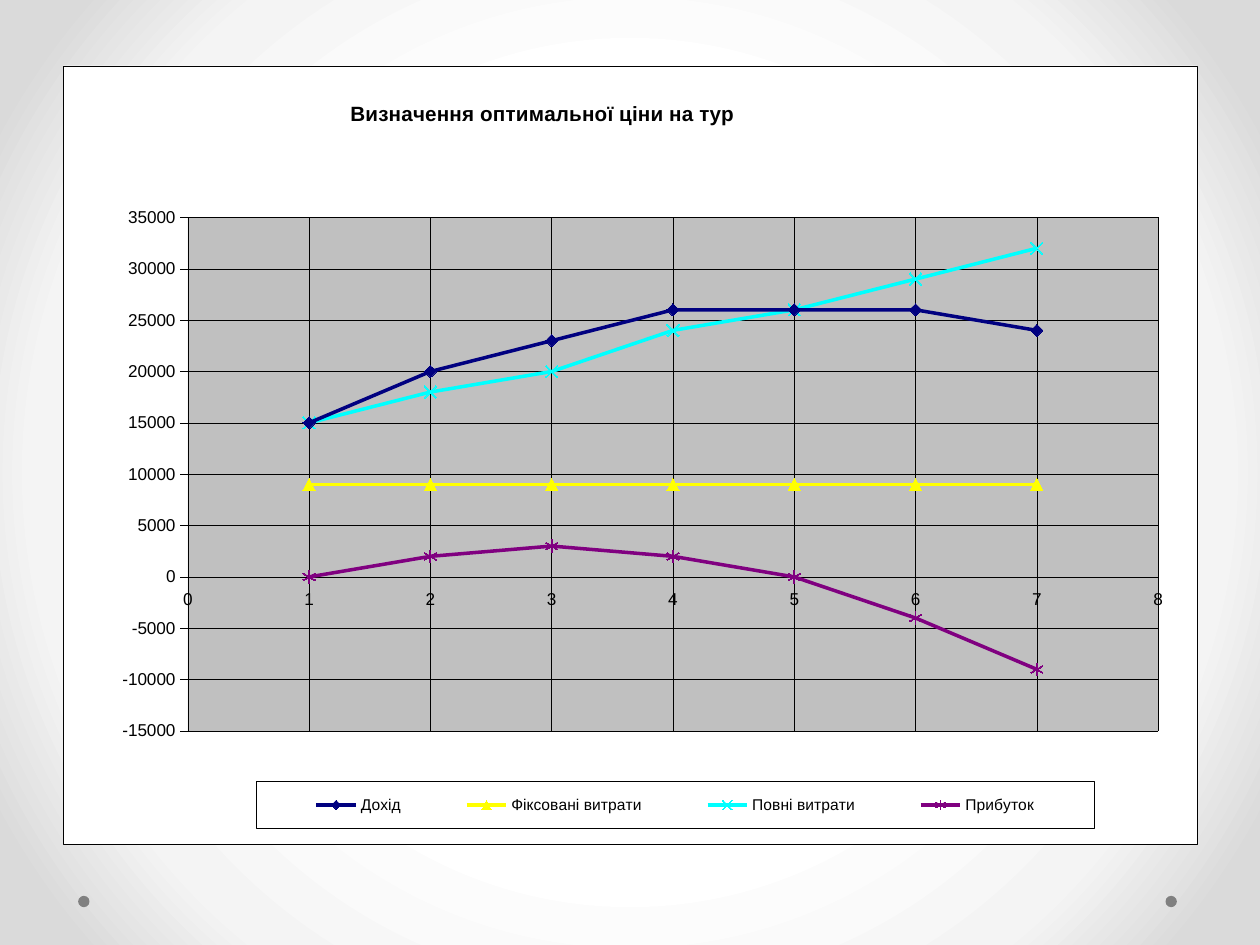
from dataclasses import dataclass

from pptx import Presentation
from pptx.chart.data import XyChartData
from pptx.dml.color import RGBColor
from pptx.enum.chart import XL_CHART_TYPE, XL_LEGEND_POSITION, XL_MARKER_STYLE, XL_TICK_MARK
from pptx.enum.shapes import MSO_SHAPE
from pptx.oxml import parse_xml
from pptx.oxml.ns import nsdecls, qn
from pptx.util import Inches, Pt

OVAL = MSO_SHAPE.OVAL
SCATTER = XL_CHART_TYPE.XY_SCATTER_LINES
BOTTOM = XL_LEGEND_POSITION.BOTTOM
DIAMOND, TRIANGLE = XL_MARKER_STYLE.DIAMOND, XL_MARKER_STYLE.TRIANGLE
CROSS, STAR = XL_MARKER_STYLE.X, XL_MARKER_STYLE.STAR
OUTSIDE, NO_TICK = XL_TICK_MARK.OUTSIDE, XL_TICK_MARK.NONE

BLACK = RGBColor(0x00, 0x00, 0x00)
WHITE = RGBColor(0xFF, 0xFF, 0xFF)
SILVER = RGBColor(0xC0, 0xC0, 0xC0)
GRAY = RGBColor(0x80, 0x80, 0x80)
LIGHT = RGBColor(0xF4, 0xF4, 0xF4)
EDGE = RGBColor(0xDA, 0xDA, 0xDA)
NAVY = RGBColor(0x00, 0x00, 0x80)
YELLOW = RGBColor(0xFF, 0xFF, 0x00)
CYAN = RGBColor(0x00, 0xFF, 0xFF)
PURPLE = RGBColor(0x80, 0x00, 0x80)

FONT = "Arial"
HAIRLINE = 0.25


@dataclass
class Curve:
    name: str
    values: list[int]
    color: RGBColor
    marker: XL_MARKER_STYLE
    filled: bool


CURVES = [
    Curve("Дохід", [15000, 20000, 23000, 26000, 26000, 26000, 24000], NAVY, DIAMOND, True),
    Curve("Фіксовані витрати", [9000] * 7, YELLOW, TRIANGLE, True),
    Curve("Повні витрати", [15000, 18000, 20000, 24000, 26000, 29000, 32000], CYAN, CROSS, False),
    Curve("Прибуток", [0, 2000, 3000, 2000, 0, -4000, -9000], PURPLE, STAR, False),
]


def set_background(slide, stops: list[tuple[int, RGBColor]]) -> None:
    slide.background.fill.gradient()
    gradient = slide._element.find(".//" + qn("a:gradFill"))
    stop_xml = "".join(
        f'<a:gs pos="{percent * 1000}"><a:srgbClr val="{color}"/></a:gs>'
        for percent, color in stops
    )
    radial = parse_xml(
        f'<a:gradFill {nsdecls("a")} rotWithShape="1"><a:gsLst>{stop_xml}</a:gsLst>'
        '<a:path path="circle"><a:fillToRect l="50000" t="50000" r="50000" b="50000"/>'
        "</a:path></a:gradFill>"
    )
    gradient.getparent().replace(gradient, radial)


def add_dot(slide, left: float) -> None:
    dot = slide.shapes.add_shape(OVAL, Inches(left), Inches(7.11), Inches(0.09), Inches(0.09))
    dot.shadow.inherit = False
    dot.fill.solid()
    dot.fill.fore_color.rgb = GRAY
    dot.line.fill.background()


def set_font(font, size: float, bold: bool = False) -> None:
    for attribute, value in {"name": FONT, "size": Pt(size), "bold": bold}.items():
        setattr(font, attribute, value)
    font.color.rgb = BLACK


def set_line(line, color: RGBColor, width: float) -> None:
    line.color.rgb = color
    line.width = Pt(width)


def place(element, index: int, target: str = "", **fractions: float) -> None:
    for old in element.findall(qn("c:layout")):
        element.remove(old)
    target_xml = f'<c:layoutTarget val="{target}"/>' if target else ""
    modes = "".join(f'<c:{key}Mode val="edge"/>' for key in ("x", "y"))
    sizes = "".join(f'<c:{key} val="{value}"/>' for key, value in fractions.items())
    element.insert(index, parse_xml(
        f'<c:layout {nsdecls("c")}><c:manualLayout>{target_xml}{modes}{sizes}'
        "</c:manualLayout></c:layout>"
    ))


def area_format(fill: RGBColor, bordered: bool):
    border = (
        f'<a:ln w="{Pt(HAIRLINE)}"><a:solidFill><a:srgbClr val="{BLACK}"/></a:solidFill></a:ln>'
        if bordered else "<a:ln><a:noFill/></a:ln>"
    )
    return parse_xml(
        f'<c:spPr {nsdecls("c", "a")}><a:solidFill><a:srgbClr val="{fill}"/></a:solidFill>'
        f"{border}</c:spPr>"
    )


def format_axis(axis, settings: dict) -> None:
    for attribute, value in settings.items():
        setattr(axis, attribute, value)
    axis.tick_labels.number_format = "0"
    axis.tick_labels.number_format_is_linked = False
    set_font(axis.tick_labels.font, 9.8)
    set_line(axis.format.line, BLACK, HAIRLINE)
    set_line(axis.major_gridlines.format.line, BLACK, HAIRLINE)


def format_curve(series, curve: Curve) -> None:
    series.smooth = False
    set_line(series.format.line, curve.color, 2)
    marker = series.marker
    marker.style = curve.marker
    marker.size = 7
    set_line(marker.format.line, curve.color, 0.75)
    if curve.filled:
        marker.format.fill.solid()
        marker.format.fill.fore_color.rgb = curve.color
    else:
        marker.format.fill.background()


def add_price_chart(slide) -> None:
    data = XyChartData()
    for curve in CURVES:
        points = data.add_series(curve.name)
        for tour, value in enumerate(curve.values, 1):
            points.add_data_point(tour, value)
    chart = slide.shapes.add_chart(
        SCATTER, Inches(0.5), Inches(0.52), Inches(9), Inches(6.18), data
    ).chart
    set_font(chart.font, 9.8)
    chart.plots[0].vary_by_categories = False

    chart.has_title = True
    heading = chart.chart_title.text_frame
    heading.text = "Визначення оптимальної ціни на тур"
    set_font(heading.paragraphs[0].runs[0].font, 11.8, True)
    chart.chart_title.include_in_layout = False
    place(chart.chart_title._element, 1, x=0.25, y=0.04)

    shared = {"has_major_gridlines": True, "major_tick_mark": OUTSIDE, "minor_tick_mark": NO_TICK}
    format_axis(chart.category_axis, shared | {
        "minimum_scale": 0, "maximum_scale": 8, "major_unit": 1})
    format_axis(chart.value_axis, shared | {
        "minimum_scale": -15000, "maximum_scale": 35000, "major_unit": 5000})

    for series, curve in zip(chart.plots[0].series, CURVES):
        format_curve(series, curve)

    chart.has_legend = True
    legend = chart.legend
    legend.position = BOTTOM
    legend.include_in_layout = False
    set_font(legend.font, 8.9)
    place(legend._element, 1, x=0.17, y=0.92, w=0.74, h=0.06)
    legend._element.find(qn("c:overlay")).addnext(area_format(WHITE, True))

    space = chart._chartSpace
    plot_area = space.chart.plotArea
    place(plot_area, 0, "inner", x=0.11, y=0.195, w=0.856, h=0.66)
    plot_area.append(area_format(SILVER, False))
    space.chart.addnext(area_format(WHITE, True))


def main() -> None:
    deck = Presentation()
    deck.slide_width, deck.slide_height = Inches(10), Inches(7.5)
    slide = deck.slides.add_slide(deck.slide_layouts[6])
    set_background(slide, [(50, WHITE), (76, LIGHT), (92, EDGE)])
    for left in (9.25, 0.62):
        add_dot(slide, left)
    add_price_chart(slide)
    deck.save("out.pptx")


if __name__ == "__main__":
    main()
